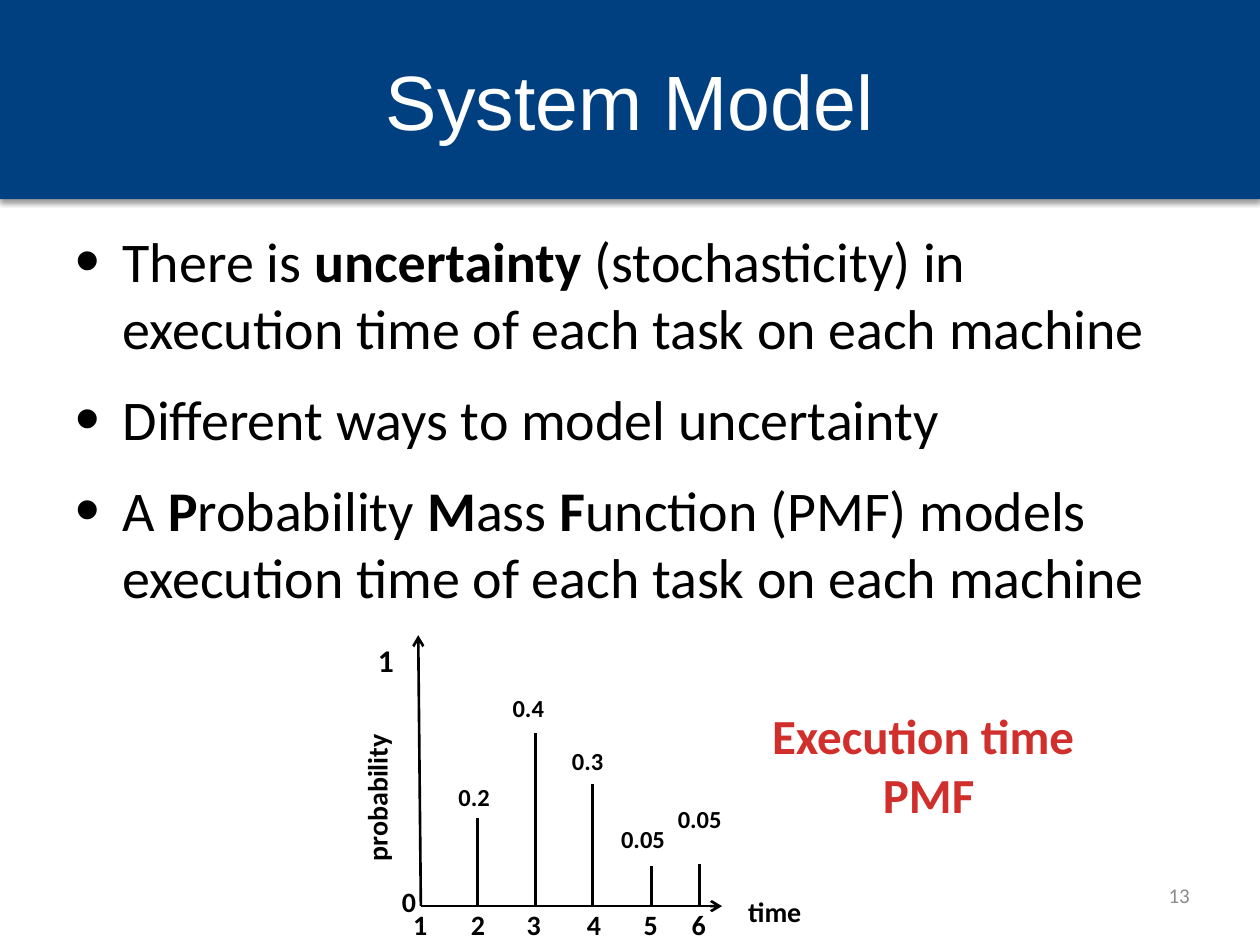
import pptx
import pptx.util
import pptx.dml.color
import pptx.enum.shapes
import pptx.enum.text
import pptx.oxml
from dataclasses import dataclass

Pt = pptx.util.Pt
ALIGN = pptx.enum.text.PP_ALIGN
ANCHOR = pptx.enum.text.MSO_ANCHOR
NS = 'xmlns:a="http://schemas.openxmlformats.org/drawingml/2006/main"'


@dataclass
class Theme:
    banner: str = "004080"
    light: str = "FFFFFF"
    ink: str = "000000"
    accent: str = "D02F2C"
    muted: str = "8C8C8C"
    head_font: str = "Arial"
    body_font: str = "Calibri"
    title: int = 44
    body: int = 32
    callout: int = 28
    top: int = 18
    axis: int = 16
    value: int = 14
    small: int = 12
    stroke: float = 1.5


class Deck:
    def __init__(self, prs, theme):
        self.t = theme
        self.s = prs.slides.add_slide(prs.slide_layouts[6])

    def banner(self, x, y, w, h):
        sp = self.s.shapes.add_shape(
            pptx.enum.shapes.MSO_SHAPE.RECTANGLE, Pt(x), Pt(y), Pt(w), Pt(h))
        sp.fill.solid()
        sp.fill.fore_color.rgb = pptx.dml.color.RGBColor.from_string(self.t.banner)
        sp.line.fill.background()
        sp._element.spPr.append(pptx.oxml.parse_xml(
            f'<a:effectLst {NS}><a:outerShdw blurRad="{Pt(3.1)}" dist="{Pt(1.6)}" '
            f'dir="5400000" rotWithShape="0"><a:srgbClr val="{self.t.ink}">'
            '<a:alpha val="38000"/></a:srgbClr></a:outerShdw></a:effectLst>'))

    def run(self, p, text, size, color=None, bold=False, font=None):
        r = p.add_run()
        r.text = text
        r.font.size = Pt(size)
        r.font.bold = bold
        r.font.name = font or self.t.body_font
        r.font.color.rgb = pptx.dml.color.RGBColor.from_string(color or self.t.ink)

    def frame(self, x, y, w, h, wrap=True, anchor=ANCHOR.TOP, rotation=0):
        sp = self.s.shapes.add_textbox(Pt(x), Pt(y), Pt(w), Pt(h))
        sp.rotation = rotation
        tf = sp.text_frame
        tf.word_wrap = wrap
        tf.vertical_anchor = anchor
        return tf

    def text(self, x, y, w, h, text, size, align=ALIGN.LEFT, color=None,
             bold=False, font=None, **frame):
        p = self.frame(x, y, w, h, **frame).paragraphs[0]
        p.alignment = align
        for i, line in enumerate(text.split("\n")):
            if i:
                p.add_line_break()
            self.run(p, line, size, color, bold, font)

    def label(self, x, y, w, h, text, size, **style):
        self.text(x, y, w, h, text, size, bold=True, wrap=False, **style)

    def bullets(self, x, y, w, h, items, indent, gap):
        tf = self.frame(x, y, w, h)
        for i, runs in enumerate(items):
            p = tf.add_paragraph() if i else tf.paragraphs[0]
            p.space_before = Pt(gap if i else 0)
            pPr = p._p.get_or_add_pPr()
            pPr.set("marL", str(Pt(indent)))
            pPr.set("indent", str(-Pt(indent)))
            for tag in ('buSzPct val="125000"', 'buFont typeface="Arial"',
                        'buChar char="•"'):
                pPr.append(pptx.oxml.parse_xml(f"<a:{tag} {NS}/>"))
            for text, bold in runs:
                self.run(p, text, self.t.body, bold=bold)

    def line(self, x1, y1, x2, y2, arrow=False):
        c = self.s.shapes.add_connector(
            pptx.enum.shapes.MSO_CONNECTOR.STRAIGHT, Pt(x1), Pt(y1), Pt(x2), Pt(y2))
        c.line.width = Pt(self.t.stroke)
        c.line.color.rgb = pptx.dml.color.RGBColor.from_string(self.t.ink)
        if arrow:
            c.line._get_or_add_ln().append(
                pptx.oxml.parse_xml(f'<a:tailEnd {NS} type="arrow"/>'))
        c._element.spPr.append(pptx.oxml.parse_xml(f"<a:effectLst {NS}/>"))


def main():
    prs = pptx.Presentation()
    prs.slide_width, prs.slide_height = Pt(720), Pt(540)
    t = Theme()
    d = Deck(prs, t)

    # Title banner
    d.banner(0, 0, 720, 113.8)
    d.text(36, 12.2, 648, 90, "System Model", t.title, ALIGN.CENTER, t.light,
           font=t.head_font, anchor=ANCHOR.MIDDLE)

    # Bullets: runs of (text, bold)
    d.bullets(36, 126, 648, 356.4, [
        [("There is ", False), ("uncertainty", True),
         (" (stochasticity) in execution time of each task on each machine", False)],
        [("Different ways to model uncertainty", False)],
        [("A ", False), ("P", True), ("robability ", False), ("M", True),
         ("ass ", False), ("F", True),
         ("unction (PMF) models execution time of each task on each machine", False)],
    ], indent=27, gap=13.5)

    # Slide number
    d.text(519, 497, 168, 28.8, "13", t.small, ALIGN.RIGHT, t.muted,
           anchor=ANCHOR.MIDDLE)

    # Axes of the probability mass function
    x0, y0 = 240.5, 517.8
    d.line(x0, y0, 412.6, y0, arrow=True)
    d.line(x0, y0, 239, 363, arrow=True)
    d.label(171.4, 442, 87.8, 26.6, "probability", t.axis, rotation=270)
    d.label(420.5, 507.6, 45.4, 26.6, "time", t.axis)
    d.label(208.8, 363, 23.8, 28.8, "1", t.top)
    d.label(222.5, 501.8, 23, 26.6, "0", t.axis)

    # Stems: time, tick left, stem x, stem top, probability, value left and top
    tick_y = 514.8
    d.label(229, tick_y, 23, 26.6, "1", t.axis)
    for time, tick_x, x, top, prob, vx, vy in [
        ("2", 262, 273, 467.3, "0.2", 254.9, 443.5),
        ("3", 293.8, 306, 419, "0.4", 285.8, 392.4),
        ("4", 328.3, 338.4, 447.8, "0.3", 319.7, 422.6),
        ("5", 360.7, 372.2, 494.6, "0.05", 347.8, 467.3),
        ("6", 388.1, 399.6, 494, "0.05", 380.2, 455.8),
    ]:
        d.line(x, y0, x, top)
        d.label(tick_x, tick_y, 23, 26.6, time, t.axis)
        d.label(vx, vy, 32.4 if len(prob) == 3 else 40, 24.5, prob, t.value)

    # Callout
    d.label(432.7, 399.6, 195.8, 74.9, "Execution time \nPMF", t.callout,
            align=ALIGN.CENTER, color=t.accent)

    prs.save("out.pptx")


if __name__ == "__main__":
    main()
